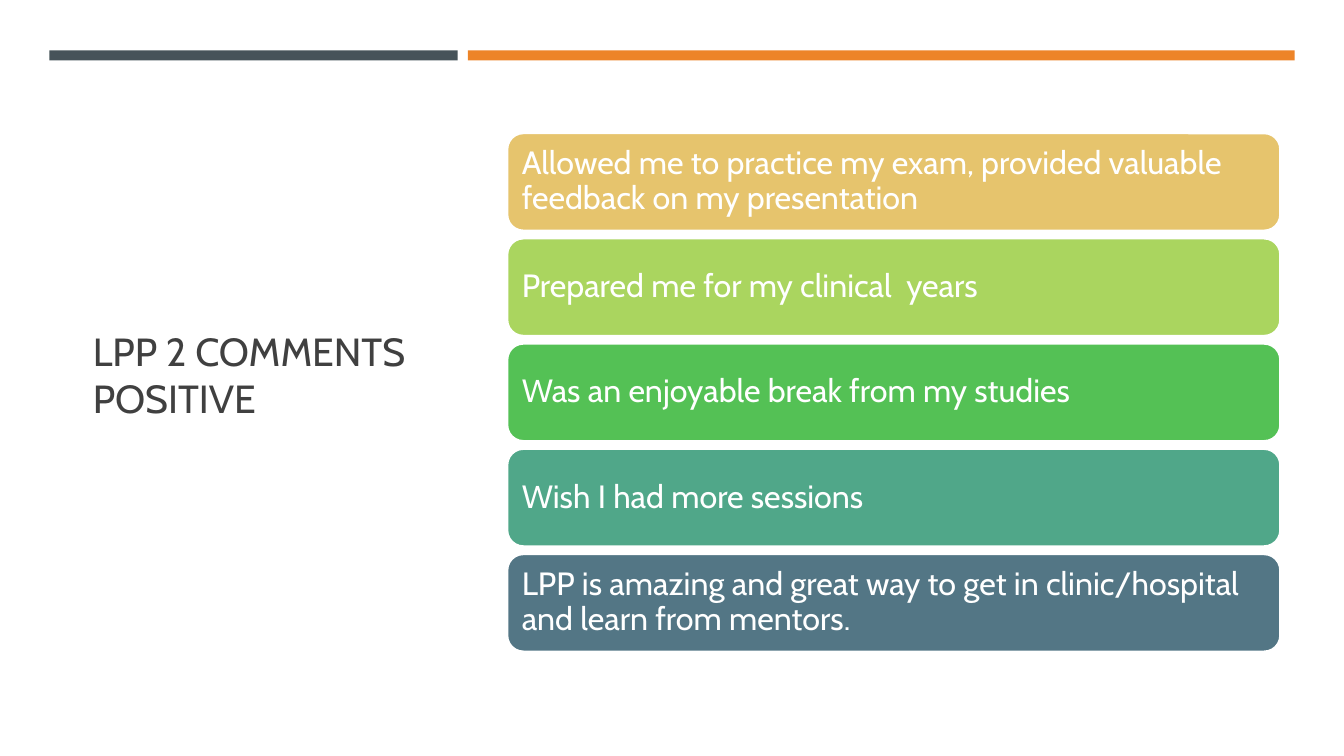
from pptx import Presentation
from pptx.dml.color import RGBColor
from pptx.enum.shapes import MSO_SHAPE as Shape
from pptx.enum.text import MSO_ANCHOR as Anchor, MSO_AUTO_SIZE as AutoSize, PP_ALIGN as Align
from pptx.util import Emu, Pt

EMU_PER_PX = 9144  # 100 px to the inch
TITLE_ONLY = 5

COMMENTS = [
    ("Allowed me to practice my exam, provided valuable feedback on my presentation", "E6C46D"),
    ("Prepared me for my clinical  years", "AAD55F"),
    ("Was an enjoyable break from my studies", "54C155"),
    ("Wish I had more sessions", "50A789"),
    ("LPP is amazing and great way to get in clinic/hospital and learn from mentors.", "537685"),
]
CARD_TOP, CARD_HEIGHT = 132, 97
CARD_STEP = 104.4


def px(n):
    return Emu(round(n * EMU_PER_PX))


def rgb(code):
    return RGBColor.from_string(code)


def write(tf, text, size, color, font="Cabin", spacing=1.0):
    tf.word_wrap = True
    tf.auto_size = AutoSize.NONE
    tf.vertical_anchor = Anchor.MIDDLE
    tf.margin_left = tf.margin_right = tf.margin_top = tf.margin_bottom = px(10)
    p = tf.paragraphs[0]
    p.alignment = Align.LEFT
    p.line_spacing = spacing
    r = p.add_run()
    r.text = text
    r.font.name = font
    r.font.size = Pt(size)
    r.font.color.rgb = rgb(color)


class CommentSlide:
    title_color = "404040"
    card_text = "FFFFFF"
    card_line = "FFFFFF"

    def __init__(self, prs):
        self.slide = prs.slides.add_slide(prs.slide_layouts[TITLE_ONLY])
        fill = self.slide.background.fill
        fill.solid()
        fill.fore_color.rgb = rgb("FFFFFF")

    def title(self, text, x, y, w, h):
        sp = self.slide.shapes.title
        sp.left, sp.top, sp.width, sp.height = map(px, (x, y, w, h))
        write(sp.text_frame, text, 28, self.title_color)

    def bar(self, x, y, w, h, color, kind=Shape.RECTANGLE):
        sp = self.slide.shapes.add_shape(kind, *map(px, (x, y, w, h)))
        sp.shadow.inherit = False
        sp.fill.solid()
        sp.fill.fore_color.rgb = rgb(color)
        sp.line.fill.background()
        return sp

    def card(self, text, x, y, w, h, color):
        sp = self.bar(x, y, w, h, color, Shape.ROUNDED_RECTANGLE)
        sp.line.color.rgb = rgb(self.card_line)
        sp.line.width = Pt(1.75)
        write(sp.text_frame, text, 23, self.card_text, spacing=0.9)


def main():
    prs = Presentation()
    prs.slide_width, prs.slide_height = px(1333), px(750)
    s = CommentSlide(prs)
    s.title("LPP 2 COMMENTS POSITIVE", 82, 114, 334, 515)
    s.bar(49, 50, 405, 10, "465359")
    s.bar(464, 50, 820, 10, "ED8428")
    for i, (text, color) in enumerate(COMMENTS):
        s.card(text, 503, CARD_TOP + i * CARD_STEP, 767, CARD_HEIGHT, color)
    prs.save("out.pptx")


if __name__ == "__main__":
    main()
